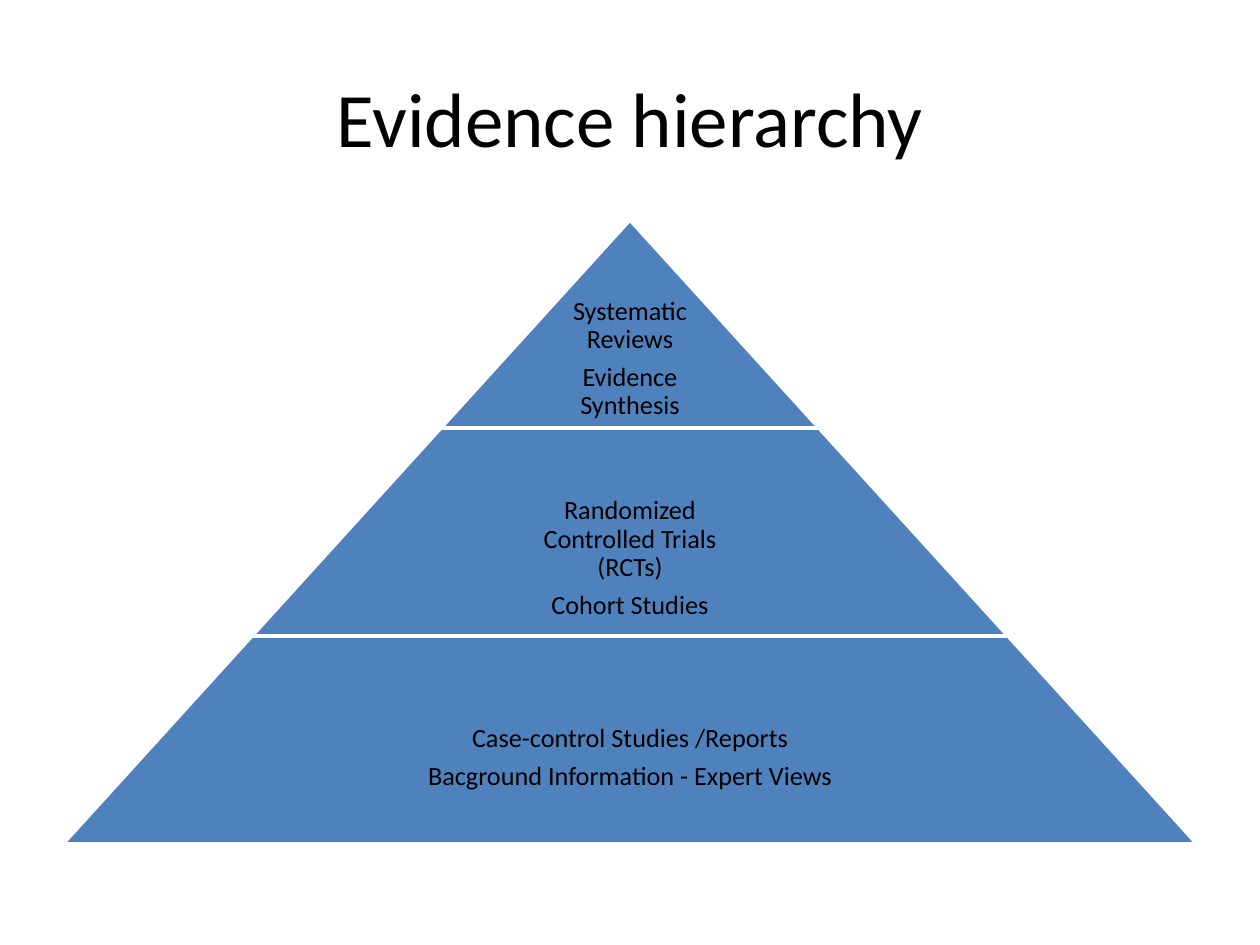
from pptx import Presentation
from pptx.dml.color import RGBColor
from pptx.enum.shapes import MSO_SHAPE
from pptx.enum.text import MSO_ANCHOR, PP_ALIGN
from pptx.util import Pt

TRAPEZOID = MSO_SHAPE.TRAPEZOID
MIDDLE = MSO_ANCHOR.MIDDLE
CENTER = PP_ALIGN.CENTER

BLUE = RGBColor(0x4F, 0x81, 0xBD)
WHITE = RGBColor(0xFF, 0xFF, 0xFF)
BLACK = RGBColor(0x00, 0x00, 0x00)
FONT = "Calibri"

TITLE = "Evidence hierarchy"
TIERS = [
    {"lines": ["Systematic Reviews", "Evidence Synthesis"],
     "text_width": 126, "text_height": 138},
    {"lines": ["Randomized Controlled Trials (RCTs)", "Cohort Studies"],
     "text_width": 240, "text_height": 155},
    {"lines": ["Case-control Studies /Reports", "Bacground Information - Expert Views"],
     "text_width": 485, "text_height": 172},
]

PAGE_WIDTH, PAGE_HEIGHT = 1260, 945
APEX_TOP = 220
TIER_HEIGHT = 208
TIER_INSET = 189
TEXT_INSET = 3


def px(length):
    return round(length * 914400 / 126)


def area(left, top, width, height):
    return [px(length) for length in (left, top, width, height)]


def format_text(frame, size):
    frame.word_wrap = True
    frame.vertical_anchor = MIDDLE
    for para in frame.paragraphs:
        para.alignment = CENTER
        for span in para.runs:
            span.font.name = FONT
            span.font.size = Pt(size)
            span.font.color.rgb = BLACK


def add_tier(page, index, tier):
    top = APEX_TOP + index * TIER_HEIGHT
    width = 2 * TIER_INSET * (index + 1)
    shape = page.shapes.add_shape(
        TRAPEZOID, *area((PAGE_WIDTH - width) / 2, top, width, TIER_HEIGHT))
    shape.adjustments[0] = TIER_INSET / TIER_HEIGHT
    shape.shadow.inherit = False
    shape.fill.solid()
    shape.fill.fore_color.rgb = BLUE
    shape.line.color.rgb = WHITE
    shape.line.width = Pt(2)

    text_width, text_height = tier["text_width"], tier["text_height"]
    box = page.shapes.add_textbox(*area(
        (PAGE_WIDTH - text_width) / 2, top + TIER_HEIGHT - text_height,
        text_width, text_height))
    frame = box.text_frame
    frame.margin_left = frame.margin_right = px(TEXT_INSET)
    frame.margin_top = frame.margin_bottom = px(TEXT_INSET)
    frame.text = "\n".join(tier["lines"])
    format_text(frame, 15)
    for para in frame.paragraphs:
        para.line_spacing = 0.9
        para.space_after = Pt(5.25)


def main():
    deck = Presentation()
    deck.slide_width, deck.slide_height = px(PAGE_WIDTH), px(PAGE_HEIGHT)
    page = deck.slides.add_slide(deck.slide_layouts[5])

    title = page.shapes.title
    title.left, title.top, title.width, title.height = area(63, 38, 1134, 157)
    title.text_frame.text = TITLE
    format_text(title.text_frame, 44)

    for index, tier in enumerate(TIERS):
        add_tier(page, index, tier)

    deck.save("out.pptx")


if __name__ == "__main__":
    main()
